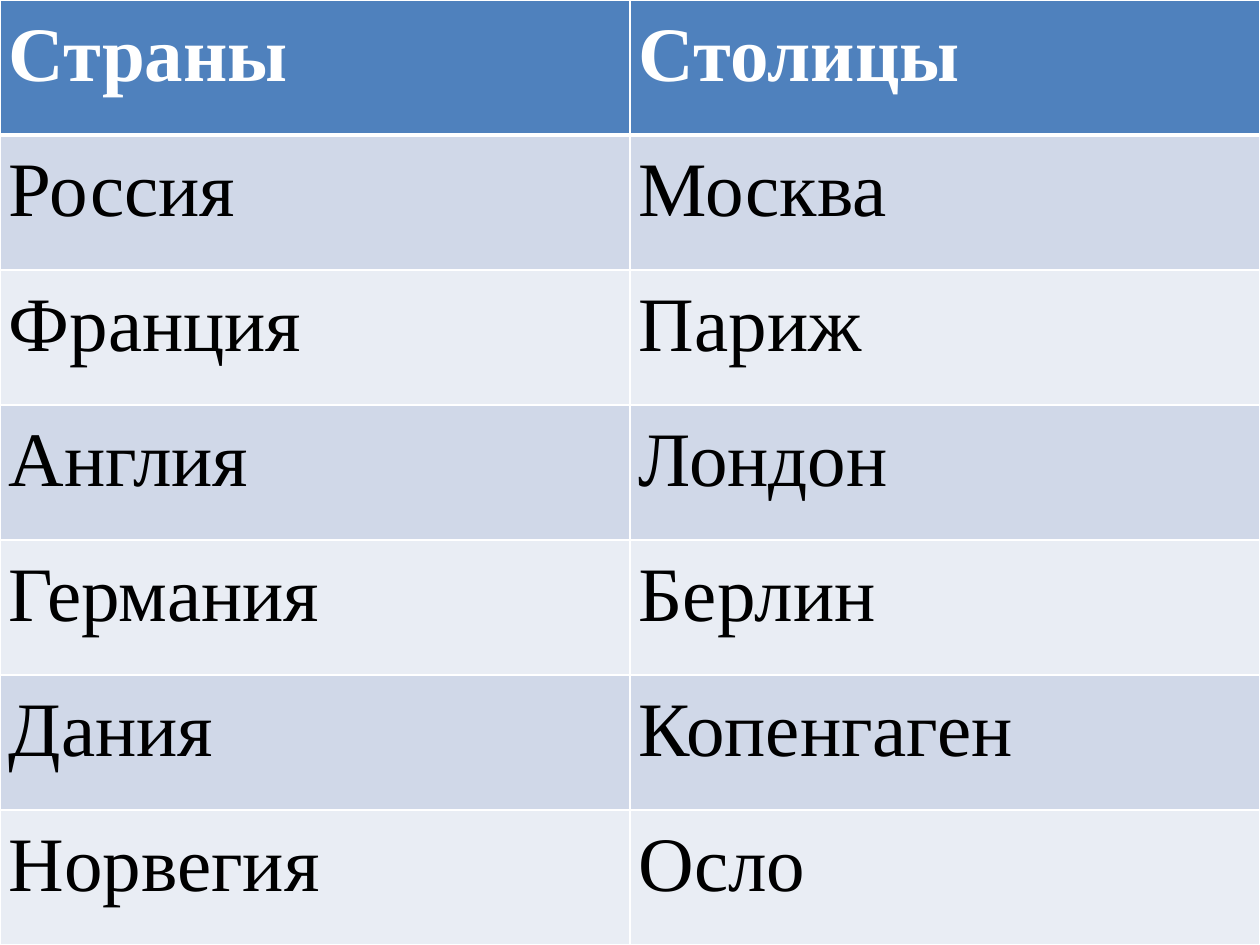
from dataclasses import dataclass

from lxml.etree import SubElement
from pptx import Presentation
from pptx.dml.color import RGBColor
from pptx.oxml.ns import qn
from pptx.util import Inches, Pt


@dataclass(frozen=True)
class Theme:
    font: str = "Times New Roman"
    size: int = 44
    header_fill: str = "4F81BD"
    band_fills: tuple = ("E9EDF4", "D0D8E8")
    header_text: str = "FFFFFF"
    body_text: str = "000000"
    border: str = "FFFFFF"
    thin: int = 1
    thick: int = 3


def add_border(cell, side, width):
    line = SubElement(cell._tc.get_or_add_tcPr(), qn(f"a:{side}"), w=str(Pt(width)))
    fill = SubElement(line, qn("a:solidFill"))
    SubElement(fill, qn("a:srgbClr"), val=theme.border)


theme = Theme()
capitals = [
    ("Страны", "Столицы"),
    ("Россия", "Москва"),
    ("Франция", "Париж"),
    ("Англия", "Лондон"),
    ("Германия", "Берлин"),
    ("Дания", "Копенгаген"),
    ("Норвегия", "Осло"),
]

prs = Presentation()
prs.slide_width = Inches(10)
prs.slide_height = Inches(7.5)
slide = prs.slides.add_slide(prs.slide_layouts[6])

capitals_table = slide.shapes.add_table(
    len(capitals), 2, 0, 0, prs.slide_width, prs.slide_height
).table

for row, names in enumerate(capitals):
    is_header = row == 0
    fill_color = theme.header_fill if is_header else theme.band_fills[row % 2]
    text_color = theme.header_text if is_header else theme.body_text
    widths = {
        "lnL": theme.thin,
        "lnR": theme.thin,
        "lnT": theme.thick if row == 1 else theme.thin,
        "lnB": theme.thick if is_header else theme.thin,
    }
    for column, name in enumerate(names):
        cell = capitals_table.cell(row, column)
        cell.margin_left = cell.margin_right = Inches(0.07)
        cell.margin_top = cell.margin_bottom = 0
        for side, width in widths.items():
            add_border(cell, side, width)
        cell.fill.solid()
        cell.fill.fore_color.rgb = RGBColor.from_string(fill_color)

        cell.text = name
        paragraph = cell.text_frame.paragraphs[0]
        paragraph.line_spacing = 1.15
        paragraph.space_after = Pt(10)
        paragraph.font.name = theme.font
        paragraph.font.size = Pt(theme.size)
        paragraph.font.bold = is_header
        paragraph.font.color.rgb = RGBColor.from_string(text_color)

prs.save("out.pptx")
